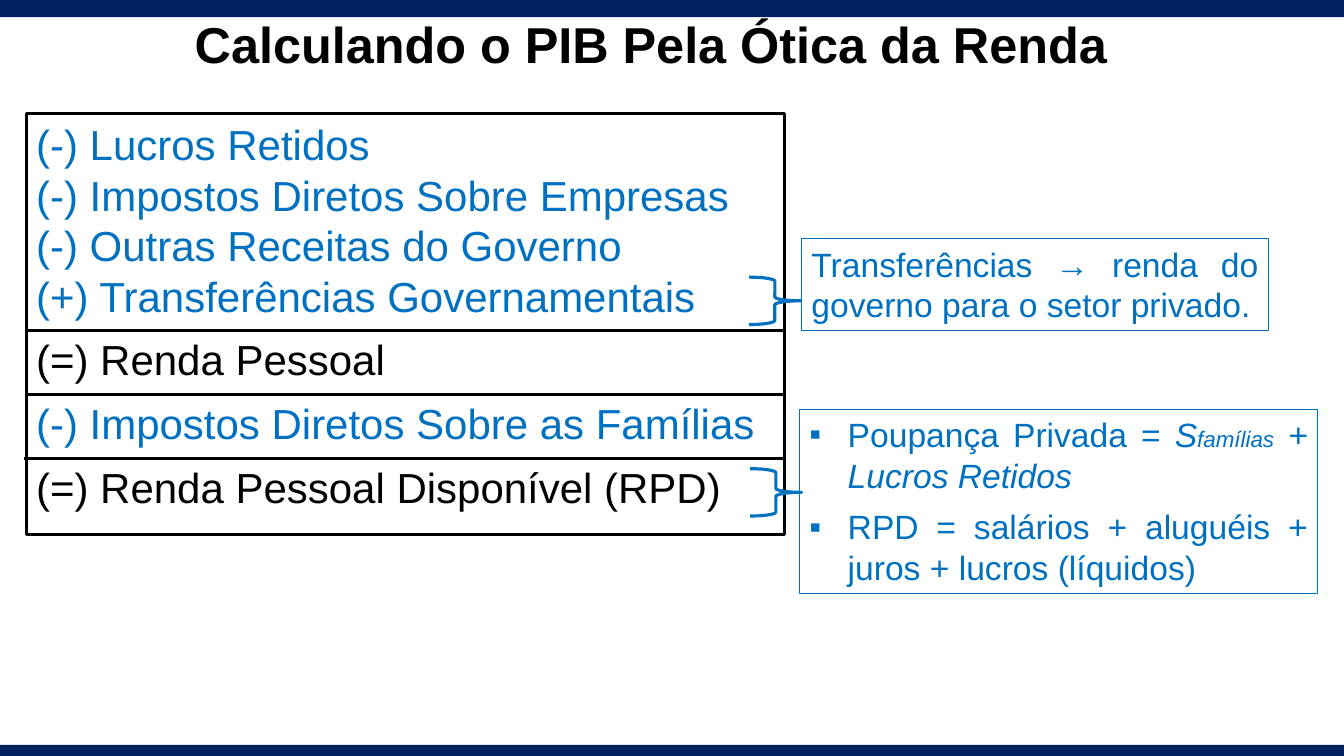
from lxml.etree import SubElement as Sub
from pptx import Presentation
from pptx.dml.color import RGBColor
from pptx.enum.shapes import MSO_CONNECTOR as Conn, MSO_SHAPE as Kind
from pptx.enum.text import MSO_ANCHOR as Anchor, MSO_AUTO_SIZE as Auto, PP_ALIGN as Align
from pptx.oxml.ns import qn
from pptx.util import Pt

PX = 9144  # 100 px to the inch
HUE = {"navy": "002060", "blue": "0070C0", "black": "000000"}


def shape(kind, box, line=None, width=0, fill=None):
    item = slide.shapes.add_shape(kind, *(n * PX for n in box))
    item.shadow.inherit = False
    if fill:
        item.fill.solid()
        item.fill.fore_color.rgb = RGBColor.from_string(HUE[fill])
    else:
        item.fill.background()
    if line:
        item.line.color.rgb = RGBColor.from_string(HUE[line])
        item.line.width = Pt(width)
    else:
        item.line.fill.background()
    item.text_frame.word_wrap = True
    item.text_frame.vertical_anchor = Anchor.TOP
    return item


def write(frame, row, runs, size, hue, align=Align.LEFT, gap=0):
    para = frame.paragraphs[0] if row == 0 else frame.add_paragraph()
    para.alignment = align
    para.line_spacing = 1.0
    para.space_before = Pt(gap)
    para.font.name = "Arial"
    para.font.size = Pt(size)
    para.font.color.rgb = RGBColor.from_string(HUE[hue])
    for text, slant, small in runs:
        run = para.add_run()
        run.text = text
        if slant:
            run.font.italic = True
        if small:
            run.font.size = Pt(small)
    return para


deck = Presentation()
deck.slide_width, deck.slide_height = 1333 * PX, 750 * PX
slide = deck.slides.add_slide(deck.slide_layouts[5])

# Top and bottom bars
for top, high in ((0, 17), (739, 11)):
    shape(Kind.RECTANGLE, (0, top, 1333, high), fill="navy")

# Title
title = slide.shapes.title
title.left, title.top, title.width, title.height = (n * PX for n in (46, 13, 1200, 60))
frame = title.text_frame
frame.auto_size = Auto.NONE
frame.vertical_anchor = Anchor.TOP
frame.margin_top = frame.margin_bottom = 0
head = write(frame, 0, [("Calculando o PIB Pela Ótica da Renda", False, None)],
             36, "black", Align.CENTER)
head.font.bold = True

# Income steps: text, colour, gap above
steps = [
    ("(-) Lucros Retidos", "blue", 0),
    ("(-) Impostos Diretos Sobre Empresas", "blue", 0),
    ("(-) Outras Receitas do Governo", "blue", 0),
    ("(+) Transferências Governamentais", "blue", 0),
    ("(=) Renda Pessoal", "black", 9.5),
    ("(-) Impostos Diretos Sobre as Famílias", "blue", 9.5),
    ("(=) Renda Pessoal Disponível (RPD)", "black", 9.5),
]
panel = shape(Kind.RECTANGLE, (26, 113, 752, 417), "black", 2.25)
for row, (text, hue, gap) in enumerate(steps):
    write(panel.text_frame, row, [(text, False, None)], 30, hue, gap=gap)

# Rules between the steps
for left, right, y in ((26, 778, 328), (25, 778, 391), (24, 777, 455)):
    rule = slide.shapes.add_connector(Conn.STRAIGHT, left * PX, y * PX, right * PX, y * PX)
    rule.line.color.rgb = RGBColor.from_string(HUE["black"])
    rule.line.width = Pt(2.25)
    Sub(rule._element.spPr, qn("a:effectLst"))

# Note on transfers
note = shape(Kind.RECTANGLE, (795, 237, 463, 91), "blue", 0.75)
write(note.text_frame, 0,
      [("Transferências → renda do governo para o setor privado.", False, None)],
      24, "blue", Align.JUSTIFY)

# Note on savings and disposable income
points = [
    [("Poupança Privada = ", False, None), ("S", True, None),
     ("famílias", True, 16), (" + Lucros Retidos", True, None)],
    [("RPD = salários + aluguéis + juros + lucros (líquidos)", False, None)],
]
note = shape(Kind.RECTANGLE, (793, 406, 514, 183), "blue", 0.75)
for row, runs in enumerate(points):
    para = write(note.text_frame, row, runs, 24, "blue", Align.JUSTIFY, gap=8.2 * row)
    props = para._p.get_or_add_pPr()
    props.set("marL", str(38 * PX))
    props.set("indent", str(-38 * PX))
    for tag, key, value in (("a:buFont", "typeface", "Arial"), ("a:buChar", "char", "▪")):
        mark = Sub(props, qn(tag))
        mark.set(key, value)
        props.insert_element_before(mark, "a:tabLst", "a:defRPr", "a:extLst")

# Braces that lead to the notes
for left, top in ((743, 275), (744, 465)):
    shape(Kind.RIGHT_BRACE, (left, top, 51, 47), "blue", 2.25)

deck.save("out.pptx")
